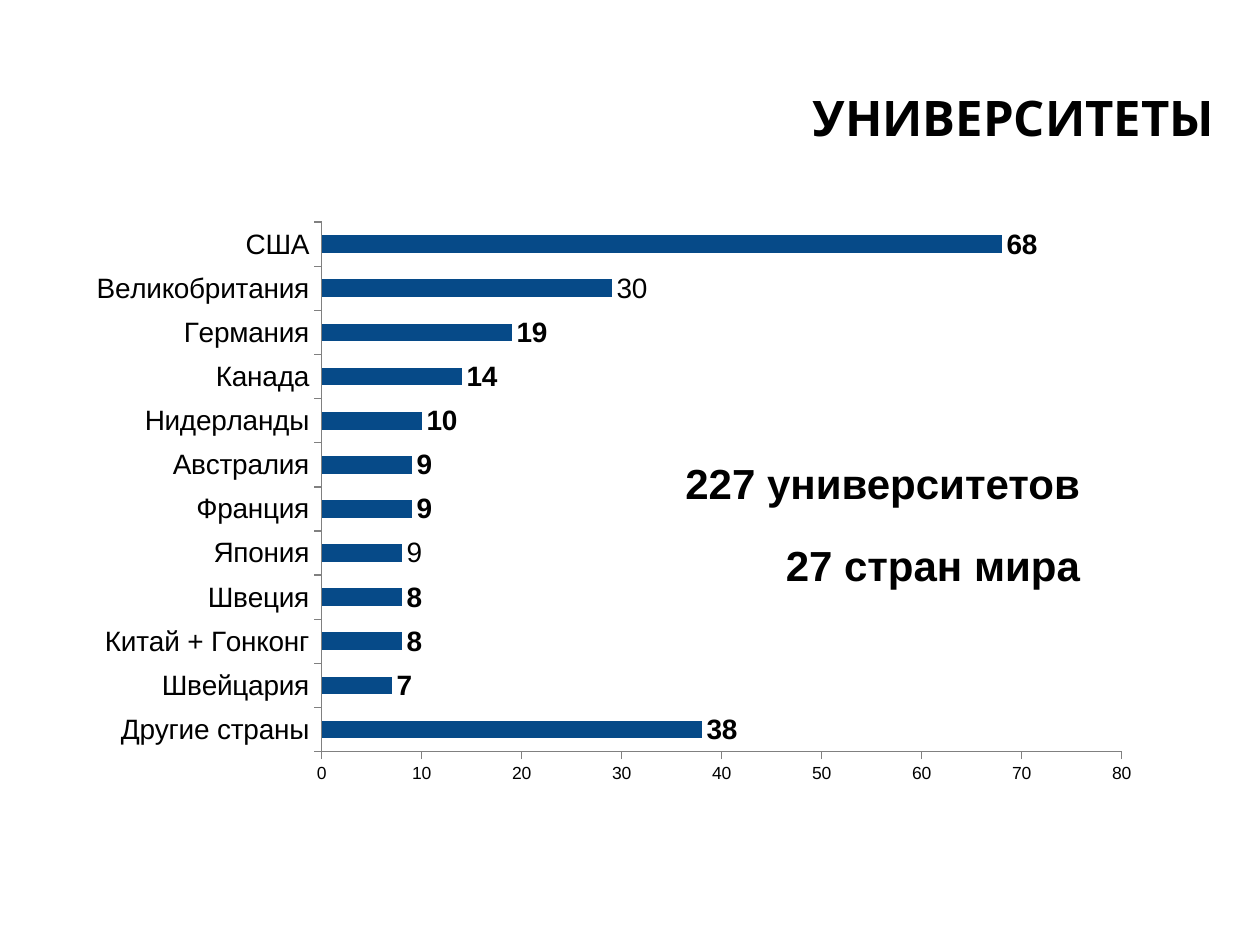
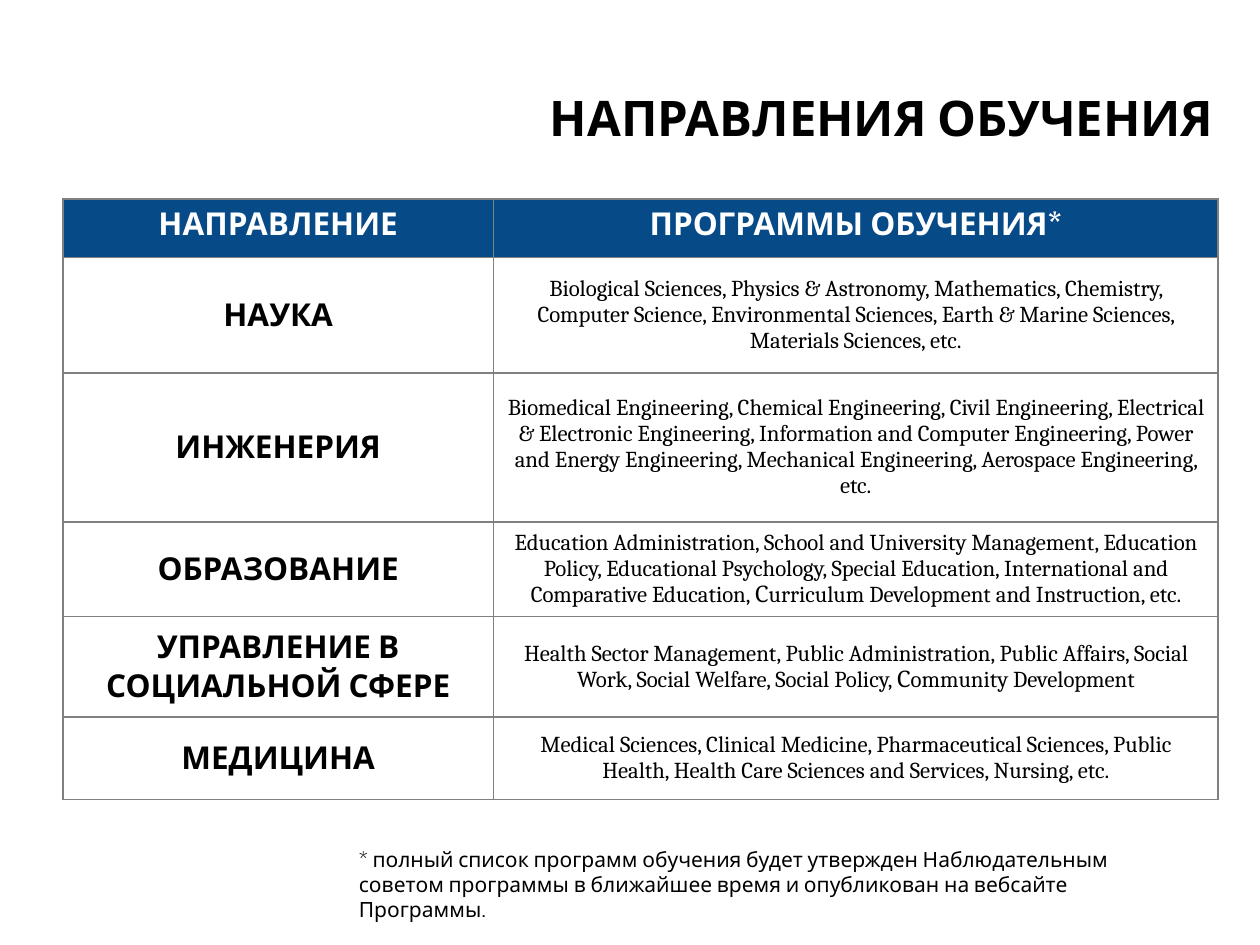
from dataclasses import dataclass
from typing import Optional

from lxml.etree import SubElement
from pptx import Presentation
from pptx.chart.data import CategoryChartData
from pptx.dml.color import RGBColor
from pptx.enum.chart import XL_CHART_TYPE, XL_LABEL_POSITION, XL_TICK_MARK
from pptx.enum.text import MSO_ANCHOR, PP_ALIGN
from pptx.oxml import parse_xml
from pptx.oxml.ns import nsdecls, qn
from pptx.slide import Slide
from pptx.util import Pt

# Shared style
BLACK = RGBColor(0x00, 0x00, 0x00)
WHITE = RGBColor(0xFF, 0xFF, 0xFF)
BLUE = RGBColor(0x06, 0x4A, 0x88)
GRAY = RGBColor(0x80, 0x80, 0x80)


@dataclass(frozen=True)
class TextStyle:
    font: str
    size: float
    bold: bool = False
    color: RGBColor = BLACK


@dataclass(frozen=True)
class Box:
    left: float
    top: float
    width: float
    height: float

    def lengths(self) -> tuple:
        return Pt(self.left), Pt(self.top), Pt(self.width), Pt(self.height)


@dataclass(frozen=True)
class Country:
    name: str
    bar: int
    label: Optional[str] = None


@dataclass(frozen=True)
class StudyField:
    name: str
    programmes: str
    height: float


TITLE = TextStyle("Cabin", 28, True)
SUMMARY = TextStyle("Arial", 24, True)
NOTE = TextStyle("Cabin", 12)
HEADER = TextStyle("Cabin", 18, True, WHITE)
FIELD = TextStyle("Cabin", 18, True)
PROGRAMMES = TextStyle("Cambria", 13)
AXIS = TextStyle("Arial", 10)
CATEGORY = TextStyle("Arial", 16)
VALUE = TextStyle("Arial", 16, True)

TITLE_BOX = Box(162, 44.64, 538.56, 43.92)

# Slide content, countries from the bottom bar up
COUNTRIES = [
    Country("Другие страны", 38),
    Country("Швейцария", 7),
    Country("Китай + Гонконг", 8),
    Country("Швеция", 8),
    Country("Япония", 8, "9"),
    Country("Франция", 9),
    Country("Австралия", 9),
    Country("Нидерланды", 10),
    Country("Канада", 14),
    Country("Германия", 19),
    Country("Великобритания", 29, "30"),
    Country("США", 68),
]

HEADER_HEIGHT = 33.5
COLUMN_WIDTHS = [246, 414]
STUDY_FIELDS = [
    StudyField(
        "НАУКА",
        "Biological Sciences, Physics & Astronomy, Mathematics, Chemistry, "
        "Computer Science, Environmental Sciences, Earth & Marine Sciences, "
        "Materials Sciences, etc.", 66),
    StudyField(
        "ИНЖЕНЕРИЯ",
        "Biomedical Engineering, Chemical Engineering, Civil Engineering, "
        "Electrical & Electronic Engineering, Information and Computer Engineering, "
        "Power and Energy Engineering, Mechanical Engineering, "
        "Aerospace Engineering, etc.", 85),
    StudyField(
        "ОБРАЗОВАНИЕ",
        "Education Administration, School and University Management, Education "
        "Policy, Educational Psychology, Special Education, International and "
        "Comparative Education, Сurriculum Development and Instruction, etc.", 47),
    StudyField(
        "УПРАВЛЕНИЕ В СОЦИАЛЬНОЙ СФЕРЕ",
        "Health Sector Management, Public Administration, Public Affairs, Social "
        "Work, Social Welfare, Social Policy, Сommunity Development", 57.5),
    StudyField(
        "МЕДИЦИНА",
        "Medical Sciences, Clinical Medicine, Pharmaceutical Sciences, Public "
        "Health, Health Care Sciences and Services, Nursing, etc.", 47),
]


def apply_style(font, style: TextStyle) -> None:
    font.name = style.font
    font.size = Pt(style.size)
    font.bold = style.bold
    font.color.rgb = style.color


def write(text_frame, lines: list[str], style: TextStyle,
          align: PP_ALIGN, gap: float = 0) -> None:
    text_frame.text = "\n".join(lines)
    for index, paragraph in enumerate(text_frame.paragraphs):
        paragraph.alignment = align
        if index:
            paragraph.space_before = Pt(gap)
        for run in paragraph.runs:
            apply_style(run.font, style)


def add_text(slide: Slide, box: Box, lines: list[str], style: TextStyle,
             align: PP_ALIGN, gap: float = 0,
             anchor: MSO_ANCHOR = MSO_ANCHOR.TOP) -> None:
    text_frame = slide.shapes.add_textbox(*box.lengths()).text_frame
    text_frame.word_wrap = True
    text_frame.vertical_anchor = anchor
    write(text_frame, lines, style, align, gap)


def add_titled_slide(presentation, title: str) -> Slide:
    slide = presentation.slides.add_slide(presentation.slide_layouts[6])
    slide.background.fill.solid()
    slide.background.fill.fore_color.rgb = WHITE
    add_text(slide, TITLE_BOX, [title], TITLE, PP_ALIGN.RIGHT,
             anchor=MSO_ANCHOR.MIDDLE)
    return slide


def place_plot_area(chart, x: float, y: float, w: float, h: float) -> None:
    """Fix the inner plot area as fractions of the chart."""
    plot_area = chart._chartSpace.chart.plotArea
    for old_layout in plot_area.findall(qn("c:layout")):
        plot_area.remove(old_layout)
    layout = parse_xml(f"<c:layout {nsdecls('c')}><c:manualLayout/></c:layout>")
    settings = {"layoutTarget": "inner", "xMode": "edge", "yMode": "edge",
                "x": x, "y": y, "w": w, "h": h}
    for name, value in settings.items():
        SubElement(layout[0], qn(f"c:{name}")).set("val", str(value))
    plot_area.insert(0, layout)


def add_country_chart(slide: Slide, box: Box) -> None:
    data = CategoryChartData()
    data.categories = [country.name for country in COUNTRIES]
    data.add_series("Series 1", [country.bar for country in COUNTRIES])
    chart = slide.shapes.add_chart(
        XL_CHART_TYPE.BAR_CLUSTERED, *box.lengths(), data).chart
    chart.has_legend = False
    chart.has_title = False
    apply_style(chart.font, AXIS)
    place_plot_area(chart, 0.23, 0.02, 0.74, 0.9)

    # Axes
    for axis, style in ((chart.category_axis, CATEGORY), (chart.value_axis, AXIS)):
        axis.has_major_gridlines = False
        axis.major_tick_mark = XL_TICK_MARK.OUTSIDE
        axis.minor_tick_mark = XL_TICK_MARK.NONE
        axis.format.line.color.rgb = GRAY
        apply_style(axis.tick_labels.font, style)
    chart.value_axis.minimum_scale = 0
    chart.value_axis.maximum_scale = 80
    chart.value_axis.major_unit = 10

    # Bars and their labels
    plot = chart.plots[0]
    plot.gap_width = 150
    plot.vary_by_categories = False
    series = plot.series[0]
    series.format.fill.solid()
    series.format.fill.fore_color.rgb = BLUE
    labels = series.data_labels
    labels.show_value = True
    labels.position = XL_LABEL_POSITION.OUTSIDE_END
    apply_style(labels.font, VALUE)
    for index, country in enumerate(COUNTRIES):
        if country.label:
            label = series.points[index].data_label
            write(label.text_frame, [country.label], CATEGORY, PP_ALIGN.CENTER)
            label.position = XL_LABEL_POSITION.OUTSIDE_END


def add_borders(cell) -> None:
    properties = cell._tc.get_or_add_tcPr()
    for side in ("L", "R", "T", "B"):
        line = SubElement(properties, qn(f"a:ln{side}"), w=str(Pt(1)))
        fill = SubElement(line, qn("a:solidFill"))
        SubElement(fill, qn("a:srgbClr"), val=str(GRAY))


def fill_cell(cell, text: str, style: TextStyle, anchor: MSO_ANCHOR,
              color: Optional[RGBColor] = None) -> None:
    write(cell.text_frame, [text], style, PP_ALIGN.CENTER)
    cell.vertical_anchor = anchor
    add_borders(cell)
    if color is None:
        cell.fill.background()
    else:
        cell.fill.solid()
        cell.fill.fore_color.rgb = color


def add_field_table(slide: Slide, left: float, top: float) -> None:
    heights = [HEADER_HEIGHT] + [field.height for field in STUDY_FIELDS]
    box = Box(left, top, sum(COLUMN_WIDTHS), sum(heights))
    table = slide.shapes.add_table(
        len(heights), len(COLUMN_WIDTHS), *box.lengths()).table
    table.horz_banding = False
    for column, width in zip(table.columns, COLUMN_WIDTHS):
        column.width = Pt(width)
    for row, height in zip(table.rows, heights):
        row.height = Pt(height)
    for column, heading in enumerate(("НАПРАВЛЕНИЕ", "ПРОГРАММЫ ОБУЧЕНИЯ*")):
        fill_cell(table.cell(0, column), heading, HEADER, MSO_ANCHOR.TOP, BLUE)
    for row, field in enumerate(STUDY_FIELDS, start=1):
        fill_cell(table.cell(row, 0), field.name, FIELD, MSO_ANCHOR.MIDDLE)
        fill_cell(table.cell(row, 1), field.programmes, PROGRAMMES, MSO_ANCHOR.MIDDLE)


def main() -> None:
    presentation = Presentation()
    presentation.slide_width = Pt(720)
    presentation.slide_height = Pt(540)

    # Universities by country
    slide = add_titled_slide(presentation, "УНИВЕРСИТЕТЫ")
    add_country_chart(slide, Box(41.76, 120.24, 617.76, 336.24))
    add_text(slide, Box(372.24, 257.76, 252, 83.52),
             ["227 университетов", "27 стран мира"],
             SUMMARY, PP_ALIGN.RIGHT, gap=18)

    # Fields of study
    slide = add_titled_slide(presentation, "НАПРАВЛЕНИЯ ОБУЧЕНИЯ")
    add_field_table(slide, 36, 113.76)
    add_text(slide, Box(198, 480.24, 486, 36),
             ["* полный список программ обучения будет утвержден Наблюдательным "
              "советом программы в ближайшее время и опубликован на вебсайте "
              "Программы."], NOTE, PP_ALIGN.LEFT)

    presentation.save("out.pptx")


if __name__ == "__main__":
    main()
